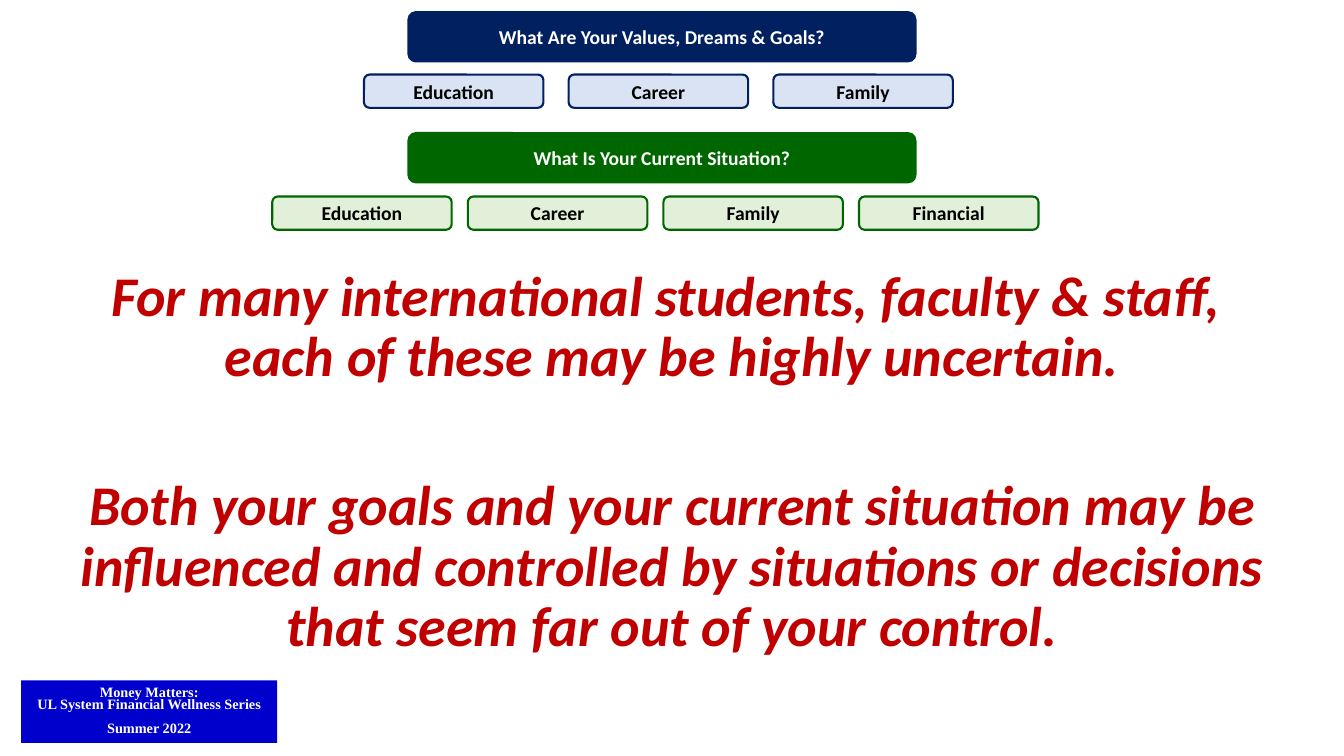
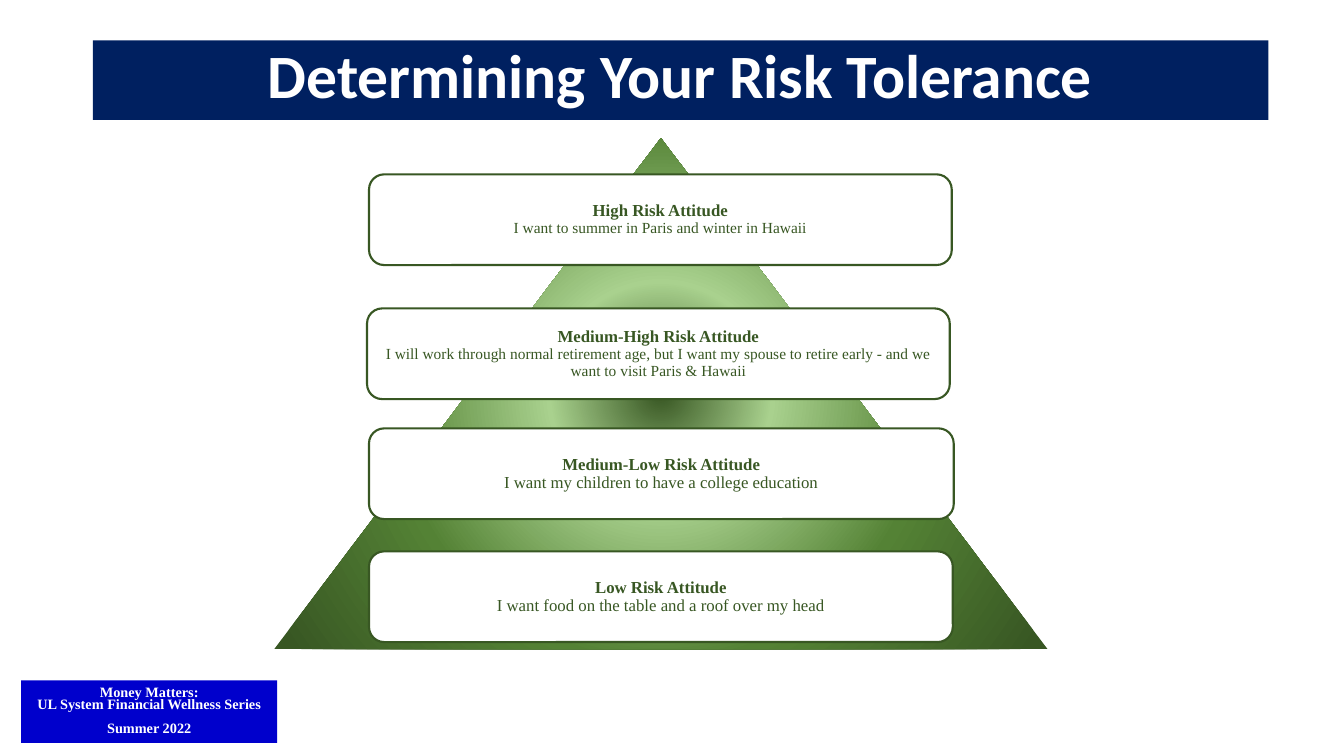
from dataclasses import dataclass

from pptx import Presentation
from pptx.dml.color import RGBColor
from pptx.enum.shapes import MSO_SHAPE
from pptx.enum.text import MSO_ANCHOR, MSO_AUTO_SIZE, PP_ALIGN
from pptx.oxml import parse_xml
from pptx.oxml.ns import nsdecls
from pptx.util import Inches, Pt

RECTANGLE = MSO_SHAPE.RECTANGLE
ROUNDED = MSO_SHAPE.ROUNDED_RECTANGLE
TRIANGLE = MSO_SHAPE.ISOSCELES_TRIANGLE
TOP = MSO_ANCHOR.TOP
MIDDLE = MSO_ANCHOR.MIDDLE
CENTER = PP_ALIGN.CENTER
NO_AUTOFIT = MSO_AUTO_SIZE.NONE

WHITE = RGBColor(0xFF, 0xFF, 0xFF)
BLACK = RGBColor(0x00, 0x00, 0x00)
NAVY = RGBColor(0x00, 0x20, 0x60)
PALE_BLUE = RGBColor(0xDA, 0xE3, 0xF3)
GREEN = RGBColor(0x00, 0x66, 0x00)
PALE_GREEN = RGBColor(0xE2, 0xF0, 0xD9)
FOREST = RGBColor(0x38, 0x57, 0x23)
LEAF = RGBColor(0xA9, 0xD1, 0x8E)
MOSS = RGBColor(0x54, 0x82, 0x35)
RED = RGBColor(0xC0, 0x00, 0x00)
FOOTER_BLUE = RGBColor(0x00, 0x00, 0xCC)

SANS = "Calibri"
SERIF = "Times New Roman"
TITLE_ONLY, BLANK = 5, 6


@dataclass(frozen=True)
class Line:
    text: str
    size: float
    color: RGBColor
    font: str = SANS
    bold: bool = True
    italic: bool = False
    spacing: float = 1.0
    before: float = 0


@dataclass(frozen=True)
class Question:
    text: str
    top: float
    color: RGBColor
    chip_color: RGBColor
    chips: tuple[str, ...]
    chip_left: float
    chip_top: float
    chip_pitch: float


@dataclass(frozen=True)
class RiskCard:
    heading: str
    detail: str
    left: float
    top: float
    width: float
    detail_size: float


QUESTIONS = (
    Question("What Are Your Values, Dreams & Goals?", 0.11, NAVY, PALE_BLUE,
             ("Education", "Career", "Family"), 3.61, 0.74, 2.03),
    Question("What Is Your Current Situation?", 1.31, GREEN, PALE_GREEN,
             ("Education", "Career", "Family", "Financial"), 2.7, 1.95, 1.94),
)

MESSAGES = (
    ("For many international students, faculty & staff, \n"
     "each of these may be highly uncertain.", 0),
    ("Both your goals and your current situation may be influenced and controlled "
     "by situations or decisions that seem far out of your control.", 63),
)

RISK_CARDS = (
    RiskCard("High Risk Attitude", "I want to summer in Paris and winter in Hawaii",
             3.66, 1.73, 5.78, 11),
    RiskCard("Medium-High Risk Attitude",
             "I will work through normal retirement age, but I want my spouse to retire "
             "early - and we want to visit Paris & Hawaii", 3.64, 3.06, 5.78, 11),
    RiskCard("Medium-Low Risk Attitude", "I want my children to have a college education",
             3.66, 4.25, 5.8, 12),
    RiskCard("Low Risk Attitude", "I want food on the table and a roof over my head",
             3.66, 5.47, 5.79, 12),
)

FOOTER_LINES = tuple(
    Line(text, 10.2, WHITE, SERIF, spacing=0.7, before=before)
    for text, before in (("Money Matters:", 0),
                         ("UL System Financial Wellness Series", 0),
                         ("Summer 2022", 8.5)))

PYRAMID_STOPS = ((0, FOREST), (24, LEAF), (58, MOSS), (97, FOREST))


def write_lines(text_frame, lines: tuple[Line, ...]) -> None:
    text_frame.word_wrap = True
    text_frame.text = "\n".join("" for _ in lines)
    for paragraph, line in zip(text_frame.paragraphs, lines):
        paragraph.text = line.text
        paragraph.alignment = CENTER
        paragraph.line_spacing = line.spacing
        if line.before:
            paragraph.space_before = Pt(line.before)
        for run in paragraph.runs:
            run.font.name = line.font
            run.font.size = Pt(line.size)
            run.font.bold = line.bold
            run.font.italic = line.italic
            run.font.color.rgb = line.color


def add_box(slide, kind, left: float, top: float, width: float, height: float,
            fill: RGBColor, lines: tuple[Line, ...] = (),
            outline: RGBColor | None = None):
    shape = slide.shapes.add_shape(kind, Inches(left), Inches(top),
                                   Inches(width), Inches(height))
    shape.shadow.inherit = False
    shape.fill.solid()
    shape.fill.fore_color.rgb = fill
    if outline is None:
        shape.line.fill.background()
    else:
        shape.line.color.rgb = outline
        shape.line.width = Pt(1.5)
    if lines:
        shape.text_frame.vertical_anchor = MIDDLE
        write_lines(shape.text_frame, lines)
    return shape


def add_slide(presentation, layout: int):
    """Add a slide with the series label that every slide carries."""
    slide = presentation.slides.add_slide(presentation.slide_layouts[layout])
    add_box(slide, RECTANGLE, 0.21, 6.75, 2.54, 0.62, FOOTER_BLUE, FOOTER_LINES)
    return slide


def add_question(slide, question: Question) -> None:
    add_box(slide, ROUNDED, 4.04, question.top, 5.05, 0.51, question.color,
            (Line(question.text, 14, WHITE),))
    for index, chip in enumerate(question.chips):
        add_box(slide, ROUNDED, question.chip_left + index * question.chip_pitch,
                question.chip_top, 1.78, 0.33, question.chip_color,
                (Line(chip, 14, BLACK),), question.color)


def add_pyramid(slide) -> None:
    """Draw the triangle with a radial gradient that starts at its centre."""
    pyramid = add_box(slide, TRIANGLE, 2.72, 1.37, 7.67, 5.07, MOSS)
    stops = "".join(f'<a:gs pos="{position * 1000}"><a:srgbClr val="{color}"/></a:gs>'
                    for position, color in PYRAMID_STOPS)
    gradient = parse_xml(
        f'<a:gradFill {nsdecls("a")} rotWithShape="1"><a:gsLst>{stops}</a:gsLst>'
        '<a:path path="circle"><a:fillToRect l="50000" t="50000" r="50000" b="50000"/>'
        '</a:path></a:gradFill>')
    properties = pyramid.element.spPr
    properties.replace(properties.find("{*}solidFill"), gradient)


def add_risk_card(slide, card: RiskCard) -> None:
    lines = (
        Line(card.heading, 12, FOREST, SERIF, spacing=0.9),
        Line(card.detail, card.detail_size, FOREST, SERIF, bold=False, spacing=0.9),
    )
    add_box(slide, ROUNDED, card.left, card.top, card.width, 0.9, WHITE, lines, FOREST)


def set_title(slide, text: str) -> None:
    title = slide.shapes.title
    title.left, title.top = Inches(0.92), Inches(0.4)
    title.width, title.height = Inches(11.66), Inches(0.79)
    title.fill.solid()
    title.fill.fore_color.rgb = NAVY
    title.text_frame.auto_size = NO_AUTOFIT
    title.text_frame.vertical_anchor = TOP
    write_lines(title.text_frame, (Line(text, 44, WHITE, spacing=0.9),))


def build_uncertainty_slide(presentation) -> None:
    slide = add_slide(presentation, BLANK)
    for question in QUESTIONS:
        add_question(slide, question)
    message_box = slide.shapes.add_textbox(Inches(0.45), Inches(2.61),
                                           Inches(12.43), Inches(4.15))
    write_lines(message_box.text_frame,
                tuple(Line(text, 40, RED, italic=True, spacing=0.9, before=before)
                      for text, before in MESSAGES))


def build_risk_slide(presentation) -> None:
    slide = add_slide(presentation, TITLE_ONLY)
    set_title(slide, "Determining Your Risk Tolerance")
    add_pyramid(slide)
    for card in RISK_CARDS:
        add_risk_card(slide, card)


def main() -> None:
    presentation = Presentation()
    presentation.slide_width = Inches(13.33)
    presentation.slide_height = Inches(7.5)
    build_uncertainty_slide(presentation)
    build_risk_slide(presentation)
    presentation.save("out.pptx")


if __name__ == "__main__":
    main()
